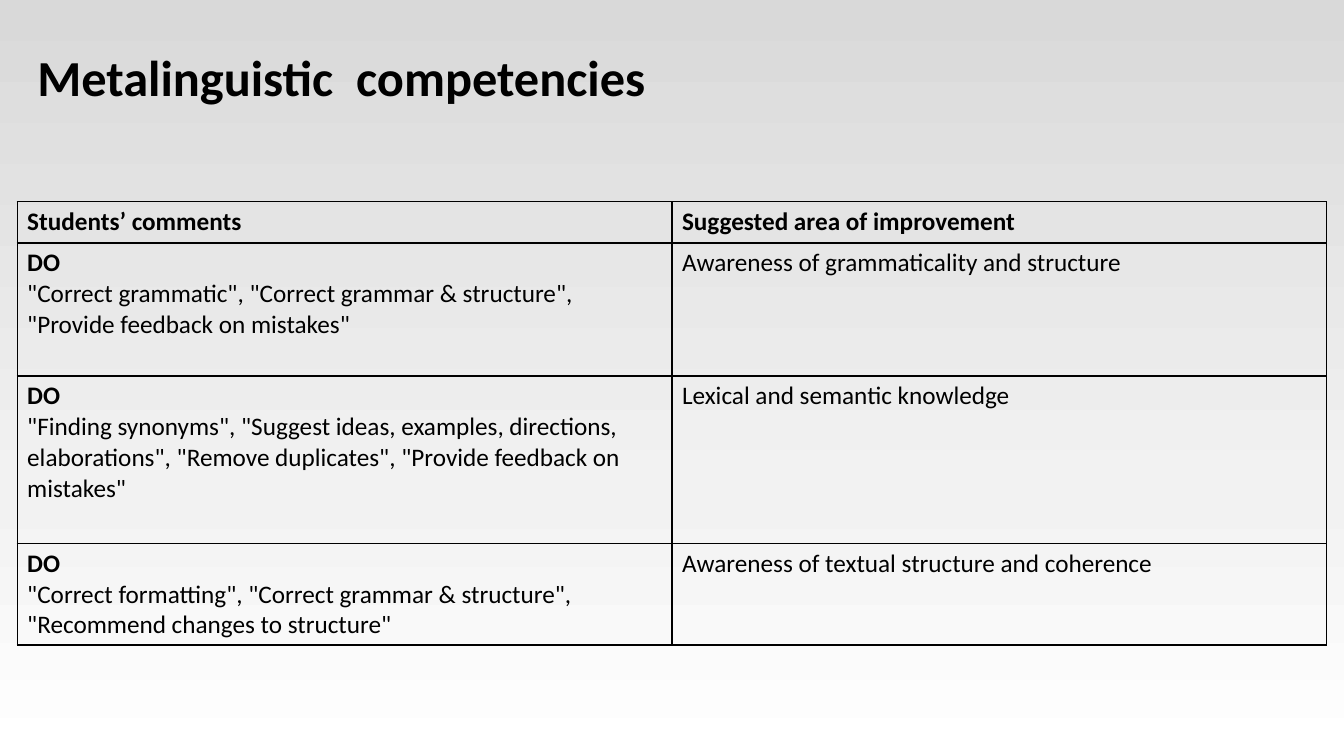
from copy import deepcopy
from dataclasses import dataclass

from lxml import etree
from pptx import Presentation
from pptx.dml.color import RGBColor
from pptx.enum.text import MSO_ANCHOR
from pptx.oxml.ns import qn
from pptx.slide import Slide
from pptx.table import _Cell
from pptx.text.text import _Paragraph
from pptx.util import Inches, Pt

MIDDLE = MSO_ANCHOR.MIDDLE
FONT = "Calibri"
COLORS = {"ink": "000000", "top": "D9D9D9", "middle": "F2F2F2", "bottom": "FFFFFF"}
BACKGROUND_STOPS = [(0, "top"), (0.65, "middle"), (1, "bottom")]
LEFT, WIDTH = 0.17, 12.99


@dataclass
class CommentRow:
    height: float
    comments: str
    improvement: str
    heading: str = "DO"


HEADER_HEIGHT = 0.41
HEADERS = ["Students’ comments", "Suggested area of improvement"]
COMMENT_ROWS = [
    CommentRow(
        1.32,
        '"Correct grammatic", "Correct grammar & structure", "Provide feedback on mistakes"',
        "Awareness of grammaticality and structure",
    ),
    CommentRow(
        1.66,
        '"Finding synonyms", "Suggest ideas, examples, directions, elaborations", '
        '"Remove duplicates", "Provide feedback on mistakes"',
        "Lexical and semantic knowledge",
    ),
    CommentRow(
        1.01,
        '"Correct formatting", "Correct grammar & structure", "Recommend changes to structure"',
        "Awareness of textual structure and coherence",
    ),
]


def format_paragraph(paragraph: _Paragraph, size: float, bold: bool) -> None:
    for run in paragraph.runs:
        run.font.name = FONT
        run.font.size = Pt(size)
        run.font.bold = bold
        run.font.color.rgb = RGBColor.from_string(COLORS["ink"])


def paint_background(slide: Slide) -> None:
    fill = slide.background.fill
    fill.gradient()
    fill.gradient_angle = 270
    stop_list = next(slide.element.iter(qn("a:gsLst")))
    stop_list.append(deepcopy(stop_list[0]))
    for stop, (position, color) in zip(fill.gradient_stops, BACKGROUND_STOPS):
        stop.position = position
        stop.color.rgb = RGBColor.from_string(COLORS[color])


def add_title(slide: Slide, text: str) -> None:
    title = slide.shapes.add_textbox(Inches(LEFT), Inches(0), Inches(WIDTH), Inches(1.59))
    text_frame = title.text_frame
    text_frame.word_wrap = True
    text_frame.vertical_anchor = MIDDLE
    text_frame.margin_left = text_frame.margin_right = Inches(0.2)
    text_frame.margin_top = text_frame.margin_bottom = Inches(0.2)
    text_frame.text = text
    paragraph = text_frame.paragraphs[0]
    paragraph.line_spacing = 0.9
    format_paragraph(paragraph, 36, True)


def add_borders(cell: _Cell) -> None:
    properties = cell._tc.get_or_add_tcPr()
    for side in ("lnL", "lnR", "lnT", "lnB"):
        line = etree.SubElement(properties, qn(f"a:{side}"), w=str(Pt(1)))
        solid_fill = etree.SubElement(line, qn("a:solidFill"))
        etree.SubElement(solid_fill, qn("a:srgbClr"), val=COLORS["ink"])


def fill_cell(cell: _Cell, lines: list[str], bold_first: bool) -> None:
    add_borders(cell)
    cell.fill.background()
    cell.text_frame.text = "\n".join(lines)
    for index, paragraph in enumerate(cell.text_frame.paragraphs):
        format_paragraph(paragraph, 18, bold_first and index == 0)


def add_comment_table(slide: Slide) -> None:
    heights = [HEADER_HEIGHT] + [row.height for row in COMMENT_ROWS]
    table = slide.shapes.add_table(
        len(heights), len(HEADERS), Inches(LEFT), Inches(2), Inches(WIDTH), Inches(sum(heights))
    ).table
    table.first_row = False
    table.horz_banding = False
    for row, height in zip(table.rows, heights):
        row.height = Inches(height)
    for column, header in enumerate(HEADERS):
        fill_cell(table.cell(0, column), [header], True)
    for index, row in enumerate(COMMENT_ROWS, start=1):
        fill_cell(table.cell(index, 0), [row.heading, row.comments], True)
        fill_cell(table.cell(index, 1), [row.improvement], False)


def main() -> None:
    presentation = Presentation()
    presentation.slide_width = Inches(13.33)
    presentation.slide_height = Inches(7.5)
    slide = presentation.slides.add_slide(presentation.slide_layouts[6])
    paint_background(slide)
    add_title(slide, "Metalinguistic  competencies")
    add_comment_table(slide)
    presentation.save("out.pptx")


if __name__ == "__main__":
    main()
